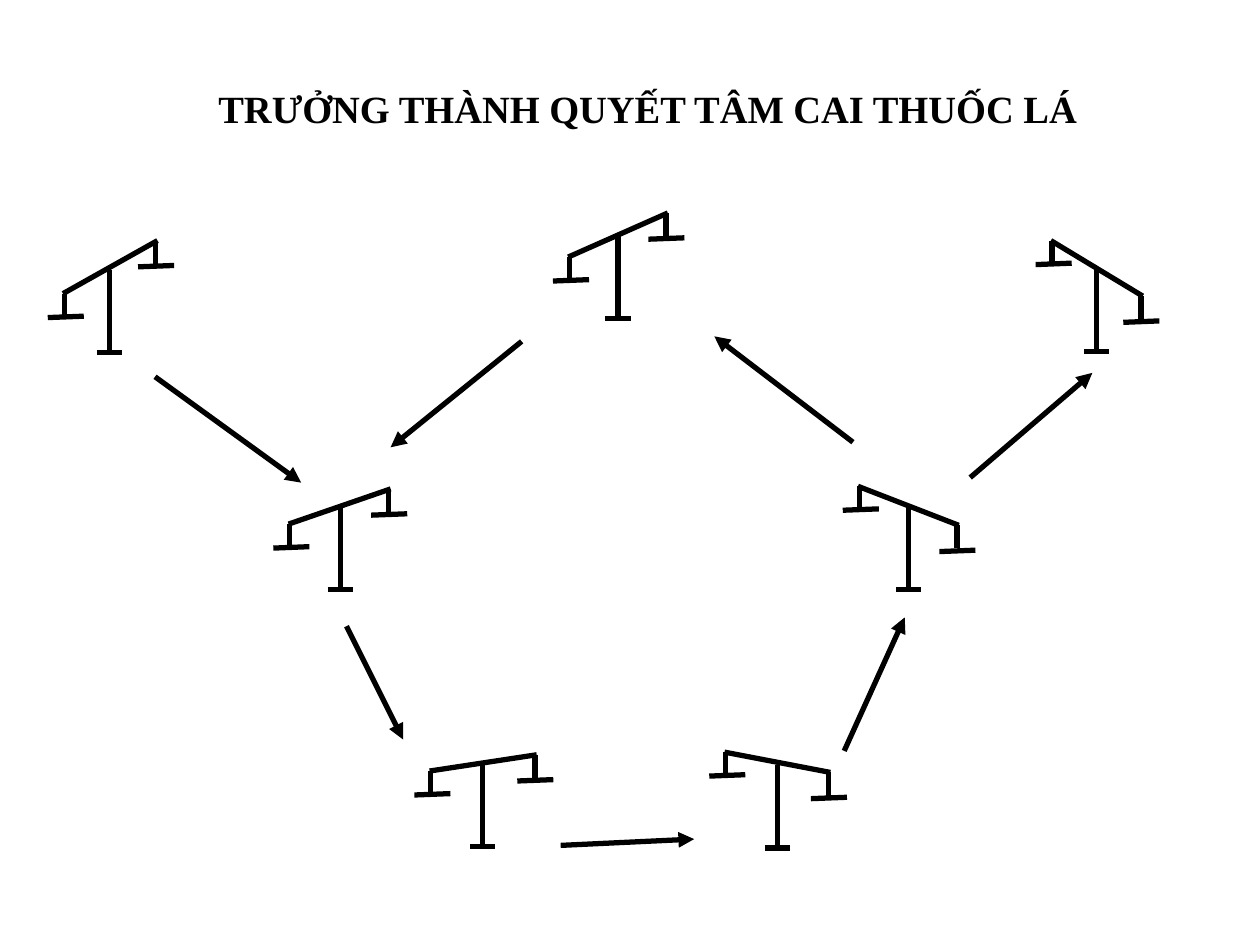
from lxml.etree import SubElement
from pptx import Presentation
from pptx.dml.color import RGBColor
from pptx.enum.shapes import MSO_CONNECTOR as Connector, MSO_SHAPE as Preset
from pptx.enum.text import MSO_ANCHOR as Anchor, PP_ALIGN as Align
from pptx.oxml.ns import qn
from pptx.util import Pt

COLORS = {"ink": "000000", "paper": "FFFFFF"}
FONT = "Times New Roman"
TITLE = "TRƯỞNG THÀNH QUYẾT TÂM CAI THUỐC LÁ"

# Each arrow: start, end
ARROWS = [
    ((554.4, 272.9), (624.2, 213.1)),
    ((198, 357.8), (230.4, 422.6)),
    ((482.4, 429.1), (517, 352.8)),
    ((298.1, 195.1), (223.2, 255.6)),
    ((88.6, 215.3), (172.1, 275.8)),
    ((487.4, 252.7), (408.2, 192.2)),
    ((320.4, 483.1), (396.7, 479.5)),
]

# Each scale: foot of the post, left end of the beam, right end of the beam
SCALES = [
    ((62.6, 201.6), (36, 167.8), (90, 137.5)),
    ((194.4, 337), (164.9, 299.5), (223.2, 279.4)),
    ((275.8, 483.8), (245.5, 440.6), (306.7, 431.3)),
    ((444.2, 484.6), (414, 429.8), (474.5, 441.4)),
    ((519.1, 337), (490.3, 277.9), (547.9, 300.2)),
    ((626.6, 200.9), (600.5, 137.5), (653, 169.2)),
    ((353.2, 182.2), (324.7, 146.9), (381.6, 121.7)),
]

POST_HEIGHT = 47.5
FOOT_HALF = 7.2
HANGER_LENGTH = 13.2
PAN_HALF = 10.3
# Beam end to hanger, hanger to pan centre, beam end to pan
LEFT_OFFSETS = (0.7, 0.9, 13.3)
RIGHT_OFFSETS = (-1, 0.2, 14.6)


def add_line(slide, start, end, arrow=False):
    points = [Pt(value) for value in (*start, *end)]
    connector = slide.shapes.add_connector(Connector.STRAIGHT, *points)
    connector.line.width = Pt(3)
    connector.line.color.rgb = RGBColor.from_string(COLORS["ink"])
    if arrow:
        SubElement(connector.line._get_or_add_ln(), qn("a:tailEnd"), type="triangle")
    SubElement(connector._element.spPr, qn("a:effectLst"))


def add_pan(slide, beam_end, offsets):
    """Hang a slightly tilted pan from one end of a beam."""
    x, y = beam_end
    hanger_shift, pan_shift, drop = offsets
    x += hanger_shift
    add_line(slide, (x, y), (x, y + HANGER_LENGTH))
    x += pan_shift
    add_line(slide, (x - PAN_HALF, y + drop + 0.4), (x + PAN_HALF, y + drop - 0.4))


def add_scale(slide, foot, left, right):
    x, y = foot
    add_line(slide, (x - FOOT_HALF, y), (x + FOOT_HALF, y))
    add_line(slide, foot, (x, y - POST_HEIGHT))
    add_line(slide, left, right)
    add_pan(slide, left, LEFT_OFFSETS)
    add_pan(slide, right, RIGHT_OFFSETS)


def add_title(slide):
    shape = slide.shapes.add_shape(
        Preset.RECTANGLE, Pt(115.9), Pt(11.5), Pt(508.3), Pt(104.4))
    shape.shadow.inherit = False
    shape.fill.background()
    shape.line.color.rgb = RGBColor.from_string(COLORS["paper"])
    shape.line.width = Pt(0.75)
    frame = shape.text_frame
    frame.word_wrap = True
    frame.vertical_anchor = Anchor.MIDDLE
    paragraph = frame.paragraphs[0]
    paragraph.alignment = Align.CENTER
    paragraph.line_spacing = 0.9
    run = paragraph.add_run()
    run.text = TITLE
    run.font.name = FONT
    run.font.size = Pt(22)
    run.font.bold = True
    run.font.color.rgb = RGBColor.from_string(COLORS["ink"])


def main():
    presentation = Presentation()
    presentation.slide_width, presentation.slide_height = Pt(720), Pt(540)
    slide = presentation.slides.add_slide(presentation.slide_layouts[6])
    for start, end in ARROWS:
        add_line(slide, start, end, arrow=True)
    for foot, left, right in SCALES:
        add_scale(slide, foot, left, right)
    add_title(slide)
    presentation.save("out.pptx")


if __name__ == "__main__":
    main()
